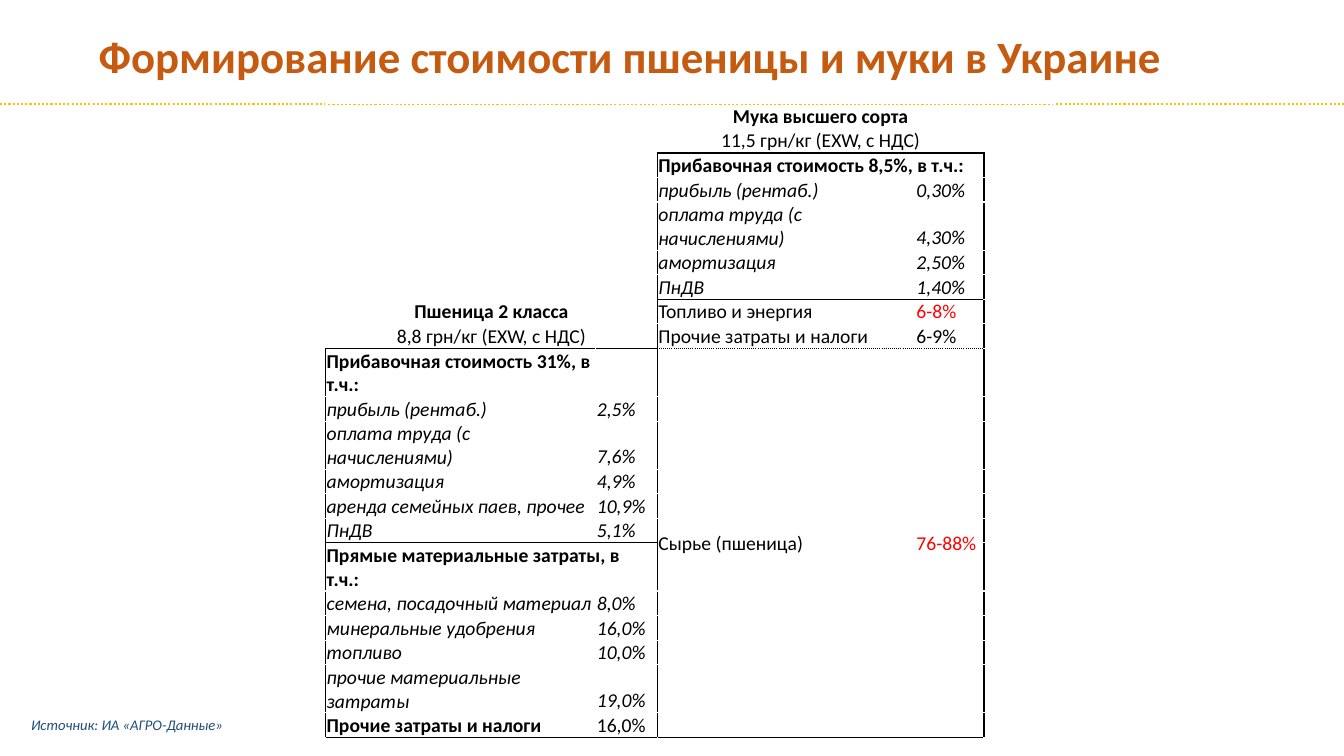
"""Builds a slide on how the price of wheat and flour is formed in Ukraine."""
from lxml.etree import SubElement
from pptx import Presentation
from pptx.dml.color import RGBColor
from pptx.enum.dml import MSO_LINE
from pptx.enum.shapes import MSO_CONNECTOR, MSO_SHAPE
from pptx.enum.text import MSO_ANCHOR, PP_ALIGN
from pptx.oxml.ns import qn
from pptx.util import Inches, Pt

TITLE = "Формирование стоимости пшеницы и муки в Украине"
SOURCE = "Источник: ИА «АГРО-Данные»"
FONT, BLACK, RED = "Calibri", "000000", "FF0000"

FLOUR = [
    ("Мука высшего сорта", "", "head"),
    ("11,5 грн/кг (EXW, с НДС)", "", "price"),
    ("Прибавочная стоимость 8,5%, в т.ч.:", "", "group"),
    ("прибыль (рентаб.)", "0,30%", "item"),
    ("оплата труда (с начислениями)", "4,30%", "item"),
    ("амортизация", "2,50%", "item"),
    ("ПнДВ", "1,40%", "item"),
    ("Топливо и энергия", "6-8%", "key"),
    ("Прочие затраты и налоги", "6-9%", "plain"),
    ("Сырье (пшеница)", "76-88%", "key"),
]
WHEAT = [
    ("Пшеница 2 класса", "", "head"),
    ("8,8 грн/кг (EXW, с НДС)", "", "price"),
    ("Прибавочная стоимость 31%, в т.ч.:", "", "total"),
    ("прибыль (рентаб.)", "2,5%", "item"),
    ("оплата труда (с начислениями)", "7,6%", "item"),
    ("амортизация", "4,9%", "item"),
    ("аренда семейных паев, прочее", "10,9%", "item"),
    ("ПнДВ", "5,1%", "item"),
    ("Прямые материальные затраты, в т.ч.:", "", "group"),
    ("семена, посадочный материал", "8,0%", "item"),
    ("минеральные удобрения", "16,0%", "item"),
    ("топливо", "10,0%", "item"),
    ("прочие материальные затраты", "19,0%", "item"),
    ("Прочие затраты и налоги", "16,0%", "total"),
]
BLOCKS = [(0, 2, FLOUR), (7, 0, WHEAT)]
COLUMNS = [2.68, 0.61, 2.56, 0.68, 0.69]
ROWS, ROW_HEIGHT = 23, 0.22
RAW_TOP, RAW_BOTTOM = 9, 20
BOXES = [(2, 2, 6, 3), (7, 2, 8, 3), (9, 2, 20, 3), (9, 0, 14, 1), (15, 0, 20, 1)]
SPANNED, BOLD = ("head", "price", "group"), ("head", "group", "total")


def color(hex_string):
    return RGBColor.from_string(hex_string)


def write(tf, text, size, hex_string, bold=False, italic=False):
    tf.text = text
    p = tf.paragraphs[0]
    font = p.runs[0].font
    font.name, font.size, font.bold, font.italic = FONT, Pt(size), bold, italic
    font.color.rgb = color(hex_string)
    return p


def set_margins(part, left, top, right, bottom):
    part.margin_left, part.margin_top = Inches(left), Inches(top)
    part.margin_right, part.margin_bottom = Inches(right), Inches(bottom)


def find_borders():
    borders = {}

    def edge(first, first_side, second, second_side, style):
        borders.setdefault(first, {})[first_side] = style
        borders.setdefault(second, {})[second_side] = style

    solid, dotted = (1, "solid"), (0.5, "dot")
    for top, left, bottom, right in BOXES:
        for c in range(left, right + 1):
            edge((top - 1, c), "B", (top, c), "T", solid)
            edge((bottom, c), "B", (bottom + 1, c), "T", solid)
        for r in range(top, bottom + 1):
            edge((r, left - 1), "R", (r, left), "L", solid)
            edge((r, right), "R", (r, right + 1), "L", solid)
    for c in (2, 3):
        edge((RAW_TOP - 1, c), "B", (RAW_TOP, c), "T", dotted)
    return borders


def draw_border(cell, side, width, dash):
    ln = SubElement(cell._tc.get_or_add_tcPr(), qn(f"a:ln{side}"), w=str(Pt(width)))
    fill = SubElement(ln, qn("a:solidFill"))
    SubElement(fill, qn("a:srgbClr"), val=BLACK)
    SubElement(ln, qn("a:prstDash"), val=dash)


def fill_row(table, r, c, label, value, style):
    cell, value_cell = table.cell(r, c), table.cell(r, c + 1)
    if style in SPANNED:
        cell.merge(value_cell)
    p = write(cell.text_frame, label, 14, BLACK, style in BOLD, style == "item")
    if style in ("head", "price"):
        p.alignment = PP_ALIGN.CENTER
    if value:
        hex_string = RED if style == "key" else BLACK
        write(value_cell.text_frame, value, 14, hex_string, italic=style == "item")


def add_cost_table(slide):
    frame = slide.shapes.add_table(ROWS, len(COLUMNS), Inches(3.23), Inches(1.03),
                                   Inches(sum(COLUMNS)), Inches(ROWS * ROW_HEIGHT))
    table = frame.table
    table.first_row = table.horz_banding = False
    for column, width in zip(table.columns, COLUMNS):
        column.width = Inches(width)
    for row in table.rows:
        row.height = Inches(ROW_HEIGHT)
    for start, c, lines in BLOCKS:
        for r, line in enumerate(lines, start):
            fill_row(table, r, c, *line)
    for c in (2, 3):
        table.cell(RAW_TOP, c).merge(table.cell(RAW_BOTTOM, c))

    borders = find_borders()
    for r in range(ROWS):
        for c in range(len(COLUMNS)):
            cell = table.cell(r, c)
            set_margins(cell, 0.01, 0.01, 0.01, 0)
            raw = r == RAW_TOP and c in (2, 3)
            cell.vertical_anchor = MSO_ANCHOR.MIDDLE if raw else MSO_ANCHOR.BOTTOM
            sides = borders.get((r, c), {})
            for side in "LRTB":
                if side in sides:
                    draw_border(cell, side, *sides[side])
            cell.fill.background()
            p = cell.text_frame.paragraphs[0]
            if not p.runs:
                SubElement(p._p, qn("a:endParaRPr"), sz="1400")


def main():
    prs = Presentation()
    prs.slide_width, prs.slide_height = Inches(13.33), Inches(7.5)
    slide = prs.slides.add_slide(prs.slide_layouts[6])

    s = slide.shapes.add_textbox(Inches(0.88), Inches(0.19), Inches(11.92), Inches(0.78))
    tf = s.text_frame
    tf.word_wrap, tf.vertical_anchor = True, MSO_ANCHOR.MIDDLE
    write(tf, TITLE, 32, "C55A11", bold=True).line_spacing = 0.9

    rule = slide.shapes.add_connector(MSO_CONNECTOR.STRAIGHT, 0, Inches(1.03),
                                      prs.slide_width, Inches(1.03))
    rule.line.color.rgb = color("FFC000")
    rule.line.width, rule.line.dash_style = Pt(1.5), MSO_LINE.ROUND_DOT
    SubElement(rule._element.spPr, qn("a:effectLst"))

    add_cost_table(slide)

    s = slide.shapes.add_shape(MSO_SHAPE.ROUNDED_RECTANGLE, Inches(0.25), Inches(7.01),
                               Inches(2.53), Inches(0.39))
    s.shadow.inherit = False
    s.fill.background()
    s.line.fill.background()
    tf = s.text_frame
    tf.word_wrap, tf.vertical_anchor = True, MSO_ANCHOR.MIDDLE
    set_margins(tf, 0.04, 0, 0.04, 0.04)
    write(tf, SOURCE, 10.5, "1F4E79", italic=True).alignment = PP_ALIGN.LEFT

    prs.save("out.pptx")


if __name__ == "__main__":
    main()
